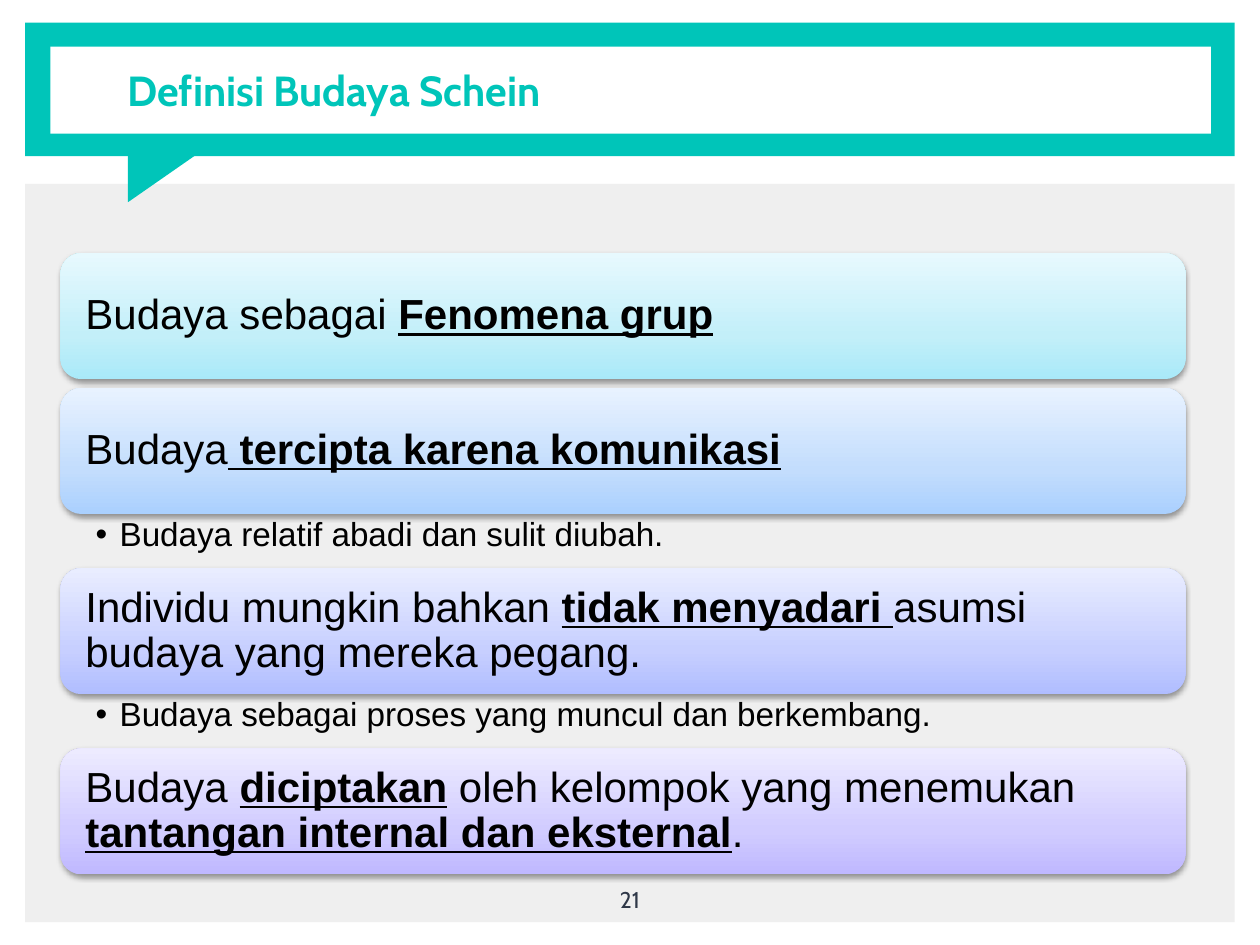
from copy import deepcopy

from lxml import etree
from pptx import Presentation
from pptx.dml.color import RGBColor
from pptx.enum.shapes import MSO_SHAPE
from pptx.enum.text import MSO_ANCHOR, MSO_AUTO_SIZE, PP_ALIGN
from pptx.oxml.ns import qn
from pptx.util import Inches, Pt

RECT, ROUND = MSO_SHAPE.RECTANGLE, MSO_SHAPE.ROUNDED_RECTANGLE
TAIL = MSO_SHAPE.RIGHT_TRIANGLE
TOP, MIDDLE = MSO_ANCHOR.TOP, MSO_ANCHOR.MIDDLE
LEFT, CENTER = PP_ALIGN.LEFT, PP_ALIGN.CENTER
FIXED = MSO_AUTO_SIZE.NONE

COLS, ROWS = 100, 75
WIDTH, HEIGHT = Inches(10), Inches(7.5)


def rgb(text):
    return RGBColor.from_string(text)


def add_tag(parent, tag, **attrs):
    return etree.SubElement(parent, qn(tag), {k: str(v) for k, v in attrs.items()})


class Deck:
    """Holds the style and the current slide; places are grid columns and rows."""
    teal, grey, white, black, slate = "00C5B9", "EFEFEF", "FFFFFF", "000000", "2F3848"
    head, body = "Cabin", "Arial"

    def __init__(self):
        self.prs = Presentation()
        self.prs.slide_width, self.prs.slide_height = WIDTH, HEIGHT
        self.slide = self.prs.slides.add_slide(self.prs.slide_layouts[5])
        self.shapes = self.slide.shapes

    def place(self, col, row, wide, high):
        return (round(WIDTH * col / COLS), round(HEIGHT * row / ROWS),
                round(WIDTH * wide / COLS), round(HEIGHT * high / ROWS))

    def shape(self, kind, at, fill=None):
        item = self.shapes.add_shape(kind, *self.place(*at))
        item.shadow.inherit = False
        item.line.fill.background()
        if fill:
            item.fill.solid()
            item.fill.fore_color.rgb = rgb(fill)
        return item

    def frame(self, item, pads, anchor=TOP, align=LEFT):
        """Set up the text frame and return its first paragraph."""
        frame = item.text_frame
        frame.word_wrap, frame.auto_size = True, FIXED
        frame.vertical_anchor = anchor
        (frame.margin_left, frame.margin_top,
         frame.margin_right, frame.margin_bottom) = map(Inches, pads)
        para = frame.paragraphs[0]
        para.alignment = align
        return para

    def run(self, para, text, size, color, face, bold=False, under=False):
        run = para.add_run()
        run.text = text
        font = run.font
        font.size, font.name = Pt(size), face
        font.bold, font.underline = bold, under
        font.color.rgb = rgb(color)

    def title(self, text, at):
        item = self.shapes.title
        item.left, item.top, item.width, item.height = self.place(*at)
        para = self.frame(item, [0.1] * 4, MIDDLE)
        self.run(para, text, 24, self.teal, self.head, bold=True)
        # Bring the title in front of the banner
        self.shapes._spTree.append(item._element)

    def text(self, at, pads, align=LEFT):
        item = self.shapes.add_textbox(*self.place(*at))
        return self.frame(item, pads, align=align)

    def number(self, text, at):
        para = self.text(at, [0.1] * 4, CENTER)
        self.run(para, text, 13, self.slate, self.head)

    def bar(self, at, tints, parts):
        """Draw a shaded bar; every second part of its text is stressed."""
        item = self.shape(ROUND, at)
        self.shade(item, tints)
        self.cast(item)
        para = self.frame(item, [0.15] * 4, MIDDLE)
        para.line_spacing = 0.9
        for i, part in enumerate(parts):
            strong = i % 2 == 1
            self.run(para, part, 24, self.black, self.body, strong, strong)

    def shade(self, item, tints):
        item.fill.gradient()
        item.fill.gradient_angle = 90
        stops = item._element.spPr.find(".//" + qn("a:gsLst"))
        stops.append(deepcopy(stops[0]))
        for stop, spot, tint in zip(item.fill.gradient_stops, (0, 0.35, 1), tints):
            stop.position = spot
            stop.color.rgb = rgb(tint)

    def cast(self, item):
        """Give the shape a soft shadow below it."""
        effects = item._element.spPr.find(qn("a:effectLst"))
        shadow = add_tag(effects, "a:outerShdw", blurRad=Pt(3.1), dist=Pt(1.6),
                         dir=90 * 60000, rotWithShape=0)
        color = add_tag(shadow, "a:srgbClr", val=self.black)
        add_tag(color, "a:alpha", val=38000)

    def note(self, at, text):
        para = self.text(at, (0.28, 0.03, 0.19, 0.03))
        para.line_spacing = 0.9
        props = para._p.get_or_add_pPr()
        props.set("marL", str(Inches(0.19)))
        props.set("indent", str(-Inches(0.19)))
        color = add_tag(props, "a:buClr")
        add_tag(color, "a:srgbClr", val=self.black)
        add_tag(props, "a:buFont", typeface=self.body)
        add_tag(props, "a:buChar", char="•")
        self.run(para, text, 19, self.black, self.body)


POINTS = [
    (("A9E9F9", "C3EFF9", "E7F9FE"),
     ["Budaya sebagai ", "Fenomena grup"], None),
    (("AAD0FE", "C3DDFD", "E8F2FF"),
     ["Budaya", " tercipta karena komunikasi"],
     "Budaya relatif abadi dan sulit diubah."),
    (("B0BDFF", "C7CFFF", "E9EDFF"),
     ["Individu mungkin bahkan ", "tidak menyadari ",
      "asumsi budaya yang mereka pegang."],
     "Budaya sebagai proses yang muncul dan berkembang."),
    (("BFB8FF", "D1CCFF", "EDEBFF"),
     ["Budaya ", "diciptakan", " oleh kelompok yang menemukan ",
      "tantangan internal dan eksternal", "."], None),
]


def main():
    deck = Deck()
    deck.shape(RECT, (2, 14.6, 96, 58.6), deck.grey)
    deck.shape(RECT, (2, 1.8, 96, 10.6), deck.teal)
    deck.shape(TAIL, (11.2, 10.2, 4.8, 6.9), deck.teal).rotation = 90
    deck.shape(RECT, (4, 3.7, 92.1, 6.9), deck.white)
    deck.title("Definisi Budaya Schein", (9.1, 1.8, 87, 10.6))
    deck.number("21", (47, 69.3, 6, 5.7))

    left, wide, row = 4.8, 89.3, 20.1
    high, gap, line = 10, 0.7, 4.3
    for tints, parts, note in POINTS:
        deck.bar((left, row, wide, high), tints, parts)
        row += high
        if note:
            deck.note((left, row, wide, line), note)
        row += line if note else gap

    deck.prs.save("out.pptx")


if __name__ == "__main__":
    main()
